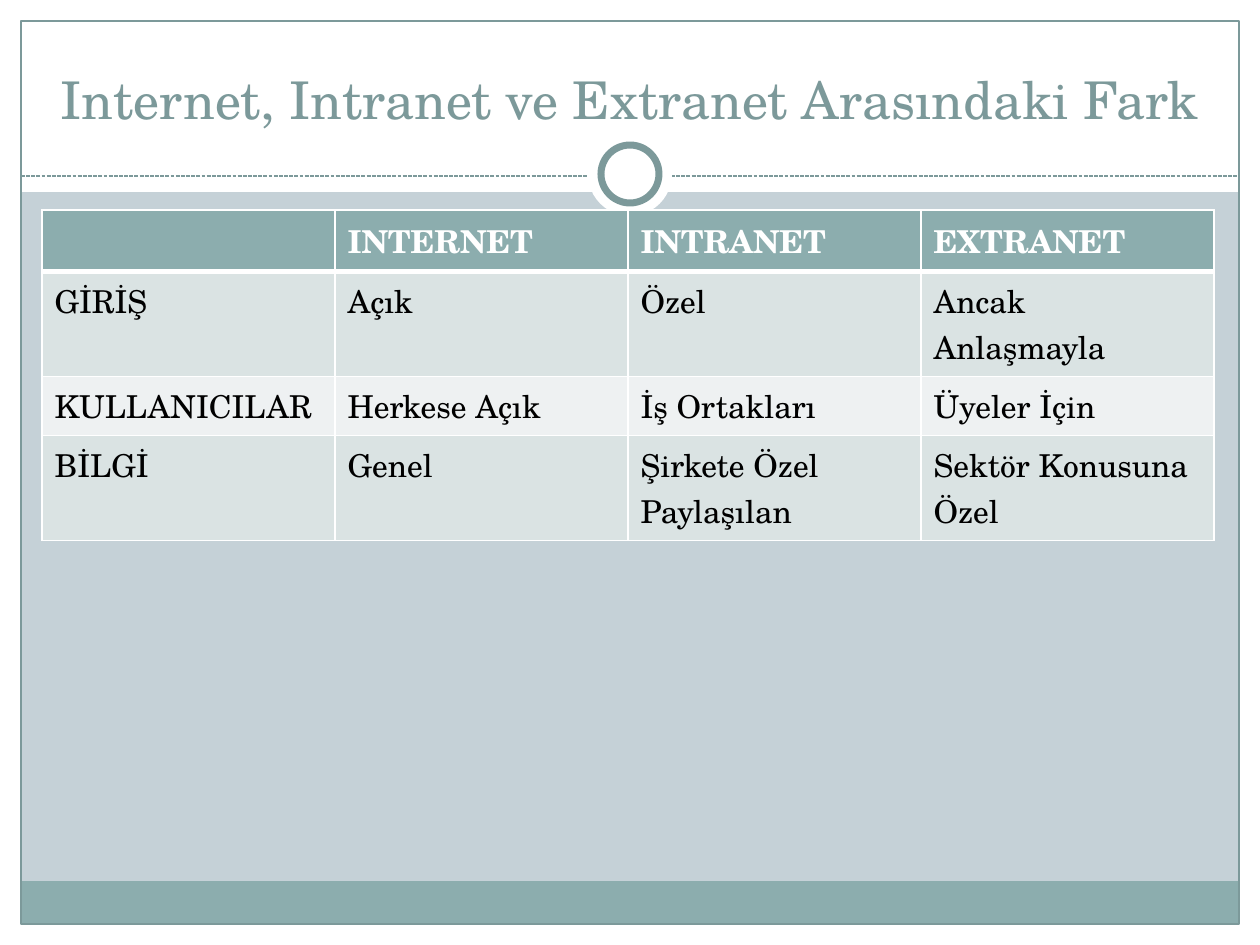
from lxml.etree import SubElement
from pptx import Presentation
from pptx.dml.color import RGBColor
from pptx.enum.dml import MSO_LINE
from pptx.enum.shapes import MSO_CONNECTOR, MSO_SHAPE
from pptx.enum.text import MSO_ANCHOR, PP_ALIGN
from pptx.oxml.ns import qn
from pptx.util import Emu, Pt

EMU_PER_PX = 914400 / 126
WIDTH, HEIGHT = 1260, 945
MARGIN = 21
COLORS = {
    "background": "C5D1D7",
    "white": "FFFFFF",
    "black": "000000",
    "teal": "8CADAE",
    "dark_teal": "7C999A",
    "odd_row": "DAE3E3",
    "even_row": "EEF1F2",
}
ROWS = [
    ["", "INTERNET", "INTRANET", "EXTRANET"],
    ["GİRİŞ", "Açık", "Özel", "Ancak Anlaşmayla"],
    ["KULLANICILAR", "Herkese Açık", "İş Ortakları", "Üyeler İçin"],
    ["BİLGİ", "Genel", "Şirkete Özel Paylaşılan", "Sektör Konusuna Özel"],
]


def px(length):
    return Emu(round(length * EMU_PER_PX))


def rgb(name):
    return RGBColor.from_string(COLORS[name])


class Page:
    """The current slide together with its text style."""

    font_name = "TeX Gyre Schola"

    def __init__(self, deck):
        self.slide = deck.slides.add_slide(deck.slide_layouts[5])
        self.shapes = self.slide.shapes
        fill = self.slide.background.fill
        fill.solid()
        fill.fore_color.rgb = rgb("background")

    def format_font(self, font, color, **values):
        for name, value in {"name": self.font_name, **values}.items():
            setattr(font, name, value)
        font.color.rgb = rgb(color)

    def shape(self, kind, box, fill=None, line=None, line_width=0.75):
        shape = self.shapes.add_shape(kind, *map(px, box))
        shape.shadow.inherit = False
        if fill:
            shape.fill.solid()
            shape.fill.fore_color.rgb = rgb(fill)
        else:
            shape.fill.background()
        if line:
            shape.line.color.rgb = rgb(line)
            shape.line.width = Pt(line_width)
        else:
            shape.line.fill.background()

    def dashed_line(self, start, end, color):
        line = self.shapes.add_connector(MSO_CONNECTOR.STRAIGHT, *map(px, start + end))
        line.line.color.rgb = rgb(color)
        line.line.width = Pt(0.75)
        line.line.dash_style = MSO_LINE.SQUARE_DOT
        SubElement(line._element.spPr, qn("a:effectLst"))

    def title(self, text, box):
        """Fill the title placeholder and bring it in front of the decoration."""
        title = self.shapes.title
        for name, value in zip(("left", "top", "width", "height"), box):
            setattr(title, name, px(value))
        frame = title.text_frame
        frame.text = text
        frame.vertical_anchor = MSO_ANCHOR.BOTTOM
        para = frame.paragraphs[0]
        para.alignment = PP_ALIGN.CENTER
        self.format_font(para.runs[0].font, "dark_teal", size=Pt(29.7))
        self.shapes._spTree.append(title._element)

    def cell_borders(self, cell, widths):
        properties = cell._tc.get_or_add_tcPr()
        for side, width in widths.items():
            line = SubElement(properties, qn(f"a:ln{side}"), w=str(Pt(width)))
            fill = SubElement(line, qn("a:solidFill"))
            SubElement(fill, qn("a:srgbClr"), val=COLORS["white"])

    def table(self, rows, left, top, column_width, row_height):
        column_count = len(rows[0])
        box = (left, top, column_width * column_count, row_height * len(rows))
        table = self.shapes.add_table(len(rows), column_count, *map(px, box)).table
        for row_index, texts in enumerate(rows):
            header = row_index == 0
            fill = "teal" if header else "odd_row" if row_index % 2 else "even_row"
            widths = {
                "L": 1,
                "R": 1,
                "T": 3 if row_index == 1 else 1,
                "B": 3 if header else 1,
            }
            for column_index, text in enumerate(texts):
                cell = table.cell(row_index, column_index)
                cell.text = text
                self.cell_borders(cell, widths)
                cell.fill.solid()
                cell.fill.fore_color.rgb = rgb(fill)
                self.format_font(
                    cell.text_frame.paragraphs[0].font,
                    "white" if header else "black",
                    size=Pt(18),
                    bold=header,
                )


def main():
    deck = Presentation()
    deck.slide_width, deck.slide_height = px(WIDTH), px(HEIGHT)
    page = Page(deck)

    inner_width, inner_height = WIDTH - 2 * MARGIN, HEIGHT - 2 * MARGIN
    white_bands = [
        (0, HEIGHT - MARGIN, WIDTH, MARGIN),
        (0, 0, WIDTH, 192),
        (0, 0, MARGIN, HEIGHT),
        (WIDTH - MARGIN, 0, MARGIN, HEIGHT),
    ]
    for band in white_bands:
        page.shape(MSO_SHAPE.RECTANGLE, band, "white")
    page.shape(MSO_SHAPE.RECTANGLE, (MARGIN, 881, inner_width, 43), "teal")
    frame = (MARGIN, MARGIN, inner_width, inner_height)
    page.shape(MSO_SHAPE.RECTANGLE, frame, line="dark_teal")

    page.dashed_line((MARGIN, 176), (WIDTH - MARGIN, 176), "dark_teal")
    page.shape(MSO_SHAPE.OVAL, (588, 132, 84, 84), "white")
    page.shape(MSO_SHAPE.OVAL, (601, 145, 58, 58), "white", "dark_teal", 4)

    page.title("Internet, Intranet ve Extranet Arasındaki Fark", (42, 32, 1176, 104))
    page.table(ROWS, left=42, top=210, column_width=293, row_height=52)
    deck.save("out.pptx")


if __name__ == "__main__":
    main()
